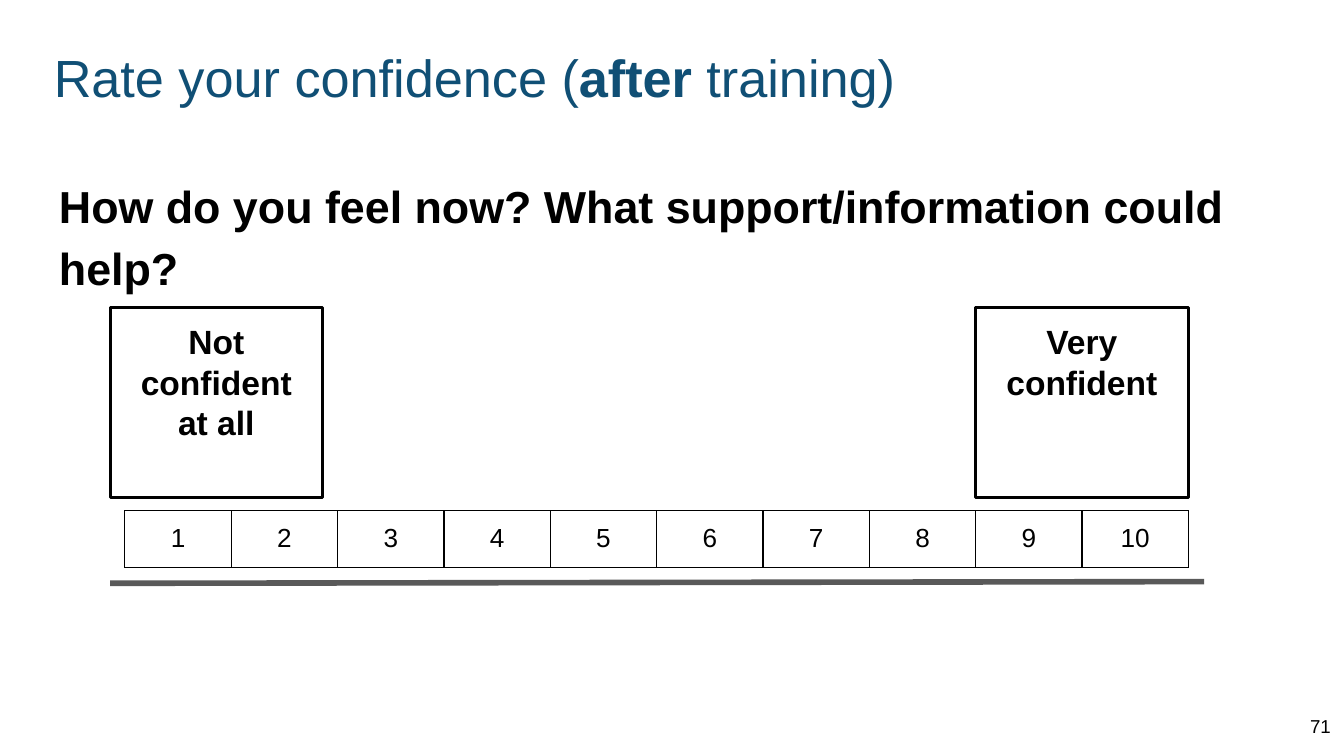
from dataclasses import dataclass

from lxml import etree
from pptx import Presentation
from pptx.dml.color import RGBColor
from pptx.enum.shapes import MSO_CONNECTOR, MSO_SHAPE
from pptx.enum.text import MSO_ANCHOR, MSO_AUTO_SIZE, PP_ALIGN
from pptx.oxml.ns import qn
from pptx.util import Pt

LEFT, CENTER, RIGHT = PP_ALIGN.LEFT, PP_ALIGN.CENTER, PP_ALIGN.RIGHT
TOP, MIDDLE = MSO_ANCHOR.TOP, MSO_ANCHOR.MIDDLE
NO_FIT = MSO_AUTO_SIZE.NONE
RECTANGLE, STRAIGHT = MSO_SHAPE.RECTANGLE, MSO_CONNECTOR.STRAIGHT

COLORS = {"title": "104F75", "text": "000000", "border": "000000", "rule": "595959"}
FONT = "Arial"
INSET = 7.2
RATINGS = range(1, 11)
RATING_WIDTH = 57


@dataclass
class Area:
    left: float
    top: float
    width: float
    height: float

    def lengths(self) -> tuple:
        return Pt(self.left), Pt(self.top), Pt(self.width), Pt(self.height)


@dataclass
class Style:
    size: float
    color: str = "text"
    bold: bool = False
    align: int = LEFT
    anchor: int = TOP
    spacing: float = 1.0


@dataclass
class EndLabel:
    text: str
    left: float


END_LABELS = [EndLabel("Not confident at all", 59), EndLabel("Very confident", 522.7)]


def set_margins(target) -> None:
    target.margin_left = target.margin_right = Pt(INSET)
    target.margin_top = target.margin_bottom = Pt(INSET)


def format_paragraph(para, style: Style) -> None:
    para.alignment = style.align
    para.line_spacing = style.spacing
    para.space_before = Pt(0)
    for span in para.runs:
        span.font.name = FONT
        span.font.size = Pt(style.size)
        span.font.bold = style.bold
        span.font.color.rgb = RGBColor.from_string(COLORS[style.color])


def format_frame(frame, style: Style) -> None:
    set_margins(frame)
    frame.word_wrap = True
    frame.auto_size = NO_FIT
    frame.vertical_anchor = style.anchor
    for para in frame.paragraphs:
        format_paragraph(para, style)


def add_title(slide, area: Area, parts: list[tuple[str, bool]]) -> None:
    title = slide.shapes.title
    title.left, title.top, title.width, title.height = area.lengths()
    para = title.text_frame.paragraphs[0]
    for text, _ in parts:
        para.add_run().text = text
    format_frame(title.text_frame, Style(28, "title"))
    for span, (_, bold) in zip(para.runs, parts):
        span.font.bold = bold


def add_text(slide, area: Area, text: str, style: Style) -> None:
    box = slide.shapes.add_textbox(*area.lengths())
    box.text_frame.text = text
    format_frame(box.text_frame, style)


def add_end_label(slide, label: EndLabel) -> None:
    box = slide.shapes.add_shape(RECTANGLE, *Area(label.left, 164.9, 113.8, 101.5).lengths())
    box.shadow.inherit = False
    box.fill.background()
    box.line.color.rgb = RGBColor.from_string(COLORS["border"])
    box.line.width = Pt(1.5)
    box.text_frame.text = label.text
    format_frame(box.text_frame, Style(18, bold=True, align=CENTER))


def add_rule(slide) -> None:
    rule = slide.shapes.add_connector(STRAIGHT, Pt(59), Pt(312.5), Pt(645.1), Pt(311.6))
    rule.line.color.rgb = RGBColor.from_string(COLORS["rule"])
    rule.line.width = Pt(3)
    etree.SubElement(rule._element.spPr, qn("a:effectLst"))


def add_cell_borders(cell) -> None:
    properties = cell._tc.get_or_add_tcPr()
    for index, side in enumerate(("lnL", "lnR", "lnT", "lnB")):
        line = etree.Element(qn(f"a:{side}"), w=str(Pt(0.75)))
        fill = etree.SubElement(line, qn("a:solidFill"))
        etree.SubElement(fill, qn("a:srgbClr"), val=COLORS["border"])
        properties.insert(index, line)


def add_scale(slide) -> None:
    area = Area(66.9, 273.6, RATING_WIDTH * len(RATINGS), 30.5)
    table = slide.shapes.add_table(1, len(RATINGS), *area.lengths()).table
    table.first_row = table.horz_banding = False
    for column, rating in enumerate(RATINGS):
        table.columns[column].width = Pt(RATING_WIDTH)
        cell = table.cell(0, column)
        cell.text_frame.text = str(rating)
        set_margins(cell)
        cell.fill.background()
        add_cell_borders(cell)
        format_paragraph(cell.text_frame.paragraphs[0], Style(14, align=CENTER))


def main() -> None:
    deck = Presentation()
    deck.slide_width, deck.slide_height = Pt(720), Pt(405)
    slide = deck.slides.add_slide(deck.slide_layouts[5])

    # Heading and question
    add_title(slide, Area(21.6, 17.3, 673.9, 45.4),
              [("Rate your confidence (", False), ("after", True), (" training)", False)])
    add_text(slide, Area(24.5, 84.2, 671, 275.8),
             "How do you feel now? What support/information could help?",
             Style(24, bold=True, spacing=1.15))

    # Confidence scale with its end labels
    add_rule(slide)
    for label in END_LABELS:
        add_end_label(slide, label)
    add_scale(slide)

    # Page number
    add_text(slide, Area(676.8, 373.7, 43.2, 31), "71", Style(10, align=RIGHT, anchor=MIDDLE))

    deck.save("out.pptx")


if __name__ == "__main__":
    main()
